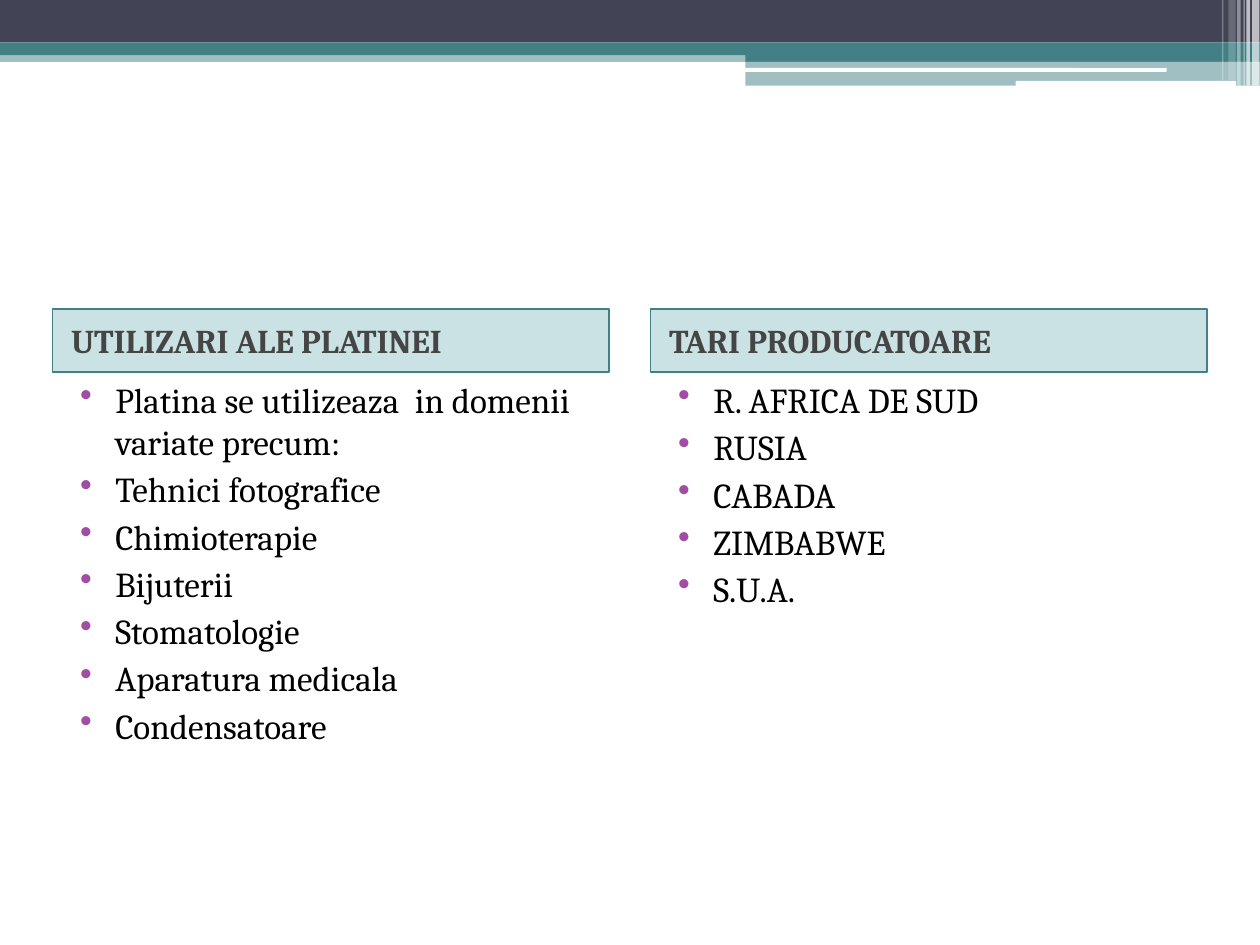
from lxml import etree
from pptx import Presentation
from pptx import util as u
from pptx.dml.color import RGBColor
from pptx.enum import shapes, text
from pptx.oxml.ns import qn

FONT = "Cambria"
TEAL, NAVY, WHITE, PURPLE = "438086", "424456", "FFFFFF", "A04DA3"
RECT = shapes.MSO_SHAPE.RECTANGLE
ROUNDED = shapes.MSO_SHAPE.ROUNDED_RECTANGLE

BANDS = [
    (0, 28.8, 720, 6.6, TEAL, 50),
    (0, 0, 720, 24.3, NAVY, 100),
    (0, 24.3, 720, 7.2, TEAL, 100),
    (426, 28, 294, 7.2, TEAL, 100),
    (426, 34.7, 294, 14.2, TEAL, 50),
]
GROOVES = [(425.5, 38.9, 241.2, 2.16), (580.3, 46.3, 126, 2.88)]
STRIPES = [
    (715.5, 4.15, 48.9, 65),
    (712.2, 2.0, 48.9, 65),
    (710.6, 0.72, 48.9, 60),
    (707, 2.0, 48.9, 40),
    (702, 4.15, 46, 20),
    (698.4, 0.72, 46, 30),
]
COLUMNS = [
    ("UTILIZARI ALE PLATINEI",
     ["Platina se utilizeaza  in domenii variate precum:", "Tehnici fotografice",
      "Chimioterapie", "Bijuterii", "Stomatologie", "Aparatura medicala",
      "Condensatoare"]),
    ("TARI PRODUCATOARE",
     ["R. AFRICA DE SUD", "RUSIA", "CABADA", "ZIMBABWE", "S.U.A."]),
]
MARGIN, COLUMN_WIDTH, COLUMN_STEP = 30, 318.24, 341.7
HEADING_TOP, HEADING_HEIGHT, LIST_HEIGHT = 176.7, 36, 306


def color(value):
    return RGBColor.from_string(value)


def block(slide, left, top, width, height, fill, opacity=100, kind=RECT):
    area = slide.shapes.add_shape(kind, *map(u.Pt, (left, top, width, height)))
    area.shadow.inherit = False
    area.fill.solid()
    area.fill.fore_color.rgb = color(fill)
    area.line.fill.background()
    if opacity < 100:
        tint = area.fill._xPr.find(".//" + qn("a:srgbClr"))
        etree.SubElement(tint, qn("a:alpha"), val=str(opacity * 1000))
    return area


def write(paragraph, words, size, ink, bold, margin, indent=0):
    paragraph.alignment = text.PP_ALIGN.LEFT
    paragraph.space_before = u.Pt(3)
    layout = paragraph._p.get_or_add_pPr()
    layout.set("marL", str(u.Pt(margin)))
    layout.set("indent", str(u.Pt(indent)))
    run = paragraph.add_run()
    run.text = words
    run.font.name = FONT
    run.font.size = u.Pt(size)
    run.font.bold = bold
    run.font.color.rgb = color(ink)


def add_bullet(paragraph):
    layout = paragraph._p.get_or_add_pPr()
    tint = etree.SubElement(layout, qn("a:buClr"))
    etree.SubElement(tint, qn("a:srgbClr"), val=PURPLE)
    etree.SubElement(layout, qn("a:buChar"), char="•")


def heading(slide, left, words):
    bar = block(slide, left, HEADING_TOP, COLUMN_WIDTH, HEADING_HEIGHT, "328E97", 25)
    bar.line.color.rgb = color(TEAL)
    bar.line.width = u.Pt(1)
    bar.text_frame.vertical_anchor = text.MSO_ANCHOR.MIDDLE
    write(bar.text_frame.paragraphs[0], words, 19, "454545", True, 3.6)


def bullet_list(slide, left, items):
    box = slide.shapes.add_textbox(
        u.Pt(left), u.Pt(HEADING_TOP + HEADING_HEIGHT), u.Pt(COLUMN_WIDTH), u.Pt(LIST_HEIGHT))
    frame = box.text_frame
    frame.word_wrap = True
    for index, item in enumerate(items):
        paragraph = frame.add_paragraph() if index else frame.paragraphs[0]
        write(paragraph, item, 20, "000000", False, 28.8, -20.16)
        add_bullet(paragraph)


def banner(slide):
    for band in BANDS:
        block(slide, *band)
    for groove in GROOVES:
        block(slide, *groove, WHITE, kind=ROUNDED)
    for left, width, height, opacity in STRIPES:
        block(slide, left, 0, width, height, WHITE, opacity)


def main():
    deck = Presentation()
    deck.slide_width, deck.slide_height = u.Pt(720), u.Pt(540)
    slide = deck.slides.add_slide(deck.slide_layouts[6])
    banner(slide)
    lefts = [MARGIN + COLUMN_STEP * index for index in range(len(COLUMNS))]
    for left, (title, _) in zip(lefts, COLUMNS):
        heading(slide, left, title)
    for left, (_, items) in zip(lefts, COLUMNS):
        bullet_list(slide, left, items)
    deck.save("out.pptx")


if __name__ == "__main__":
    main()
